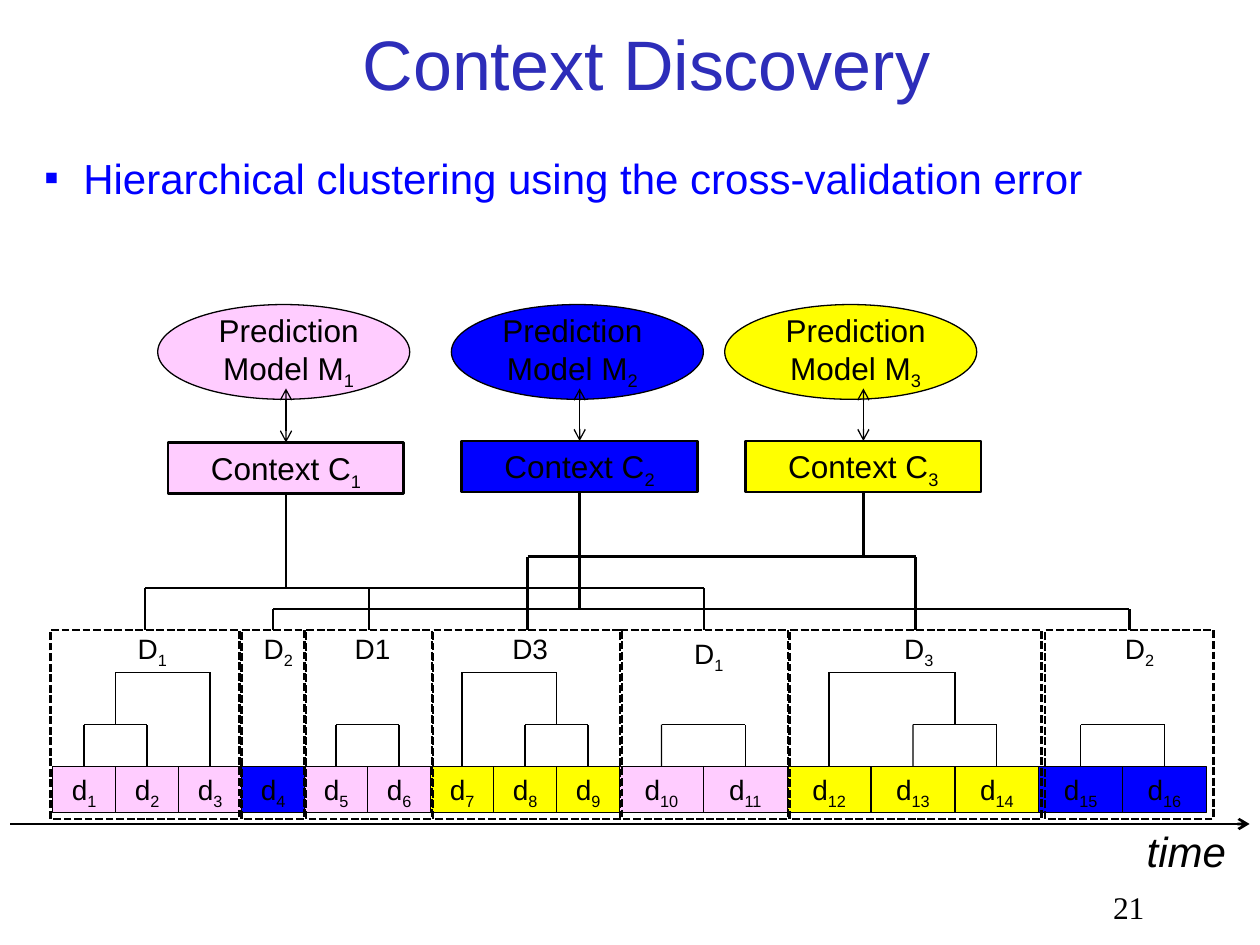
from lxml.etree import SubElement
from pptx import Presentation
from pptx.dml.color import RGBColor
from pptx.enum.dml import MSO_LINE
from pptx.enum.shapes import MSO_CONNECTOR, MSO_SHAPE
from pptx.enum.text import MSO_ANCHOR, PP_ALIGN
from pptx.oxml.ns import qn
from pptx.util import Cm, Pt

PINK, BLUE, YELLOW, BLACK = "FFCCFF", "0000FF", "FFFF00", "000000"

presentation = Presentation()
presentation.slide_width = Cm(25.4)
presentation.slide_height = Cm(19.05)
slide = presentation.slides.add_slide(presentation.slide_layouts[6])


def add_box(kind, left, top, width, height, text="", size=16, color=BLACK,
            fill=None, line=0.75, font="Arial"):
    frame = Cm(left), Cm(top), Cm(width), Cm(height)
    if kind is None:
        shape = slide.shapes.add_textbox(*frame)
    else:
        shape = slide.shapes.add_shape(kind, *frame)
        shape.shadow.inherit = False
        shape.line.color.rgb = RGBColor.from_string(BLACK)
        shape.line.width = Pt(line)
        if fill:
            shape.fill.solid()
            shape.fill.fore_color.rgb = RGBColor.from_string(fill)
        else:
            shape.fill.background()
    if not text:
        return shape
    shape.text_frame.word_wrap = True
    shape.text_frame.vertical_anchor = MSO_ANCHOR.TOP
    shape.text_frame.text = text
    for paragraph in shape.text_frame.paragraphs:
        base, mark, subscript = paragraph.text.partition("_")
        paragraph.text = base
        paragraph.alignment = PP_ALIGN.CENTER
        if subscript:
            run = paragraph.add_run()
            run.text = subscript
            run.font._element.set("baseline", "-25000")
        for run in paragraph.runs:
            run.font.name = font
            run.font.size = Pt(size)
            run.font.color.rgb = RGBColor.from_string(color)
    return shape


def add_line(x1, y1, x2, y2, width=0.75, start=None, end=None, arrows=()):
    connector = slide.shapes.add_connector(
        MSO_CONNECTOR.STRAIGHT, Cm(x1), Cm(y1), Cm(x2), Cm(y2))
    if start:
        connector.begin_connect(*start)
    if end:
        connector.end_connect(*end)
    connector.line.color.rgb = RGBColor.from_string(BLACK)
    connector.line.width = Pt(width)
    for arrow in arrows:
        SubElement(connector.line._get_or_add_ln(), qn(arrow), type="arrow")
    SubElement(connector._element.spPr, qn("a:effectLst"))


title = add_box(None, 1.7, 0, 22.66, 2.54, "Context Discovery", 40, "2D2DB9")
title.text_frame.vertical_anchor = MSO_ANCHOR.MIDDLE

bullet = add_box(None, 0.64, 2.74, 23.29, 1.45,
                 "Hierarchical clustering using the cross-validation error", 24, BLUE)
paragraph = bullet.text_frame.paragraphs[0]
paragraph.alignment = PP_ALIGN.LEFT
paragraph.line_spacing = 1.2
paragraph.space_before = Pt(4.8)
properties = paragraph._p.get_or_add_pPr()
properties.set("marL", str(Cm(0.79)))
properties.set("indent", str(-Cm(0.79)))
SubElement(SubElement(properties, qn("a:buClr")), qn("a:srgbClr"), val=BLUE)
SubElement(properties, qn("a:buFont"), typeface="Arial")
SubElement(properties, qn("a:buChar"), char="▪")

CELL_TOP = 15.45
cell_colors = [PINK] * 3 + [BLUE] + [PINK] * 2 + [YELLOW] * 3 + [PINK] * 2 + [YELLOW] * 3 + [BLUE] * 2
cells, centers = {}, {}
left = 1.06
for number, color in enumerate(cell_colors, 1):
    width = 1.27 if number < 10 else 1.69
    cells[number] = add_box(MSO_SHAPE.RECTANGLE, left, CELL_TOP, width, 0.93,
                            f"d_{number}", fill=color)
    centers[number] = left + width / 2
    left += width

add_line(0.21, 16.61, 25.19, 16.61, 1.5, arrows=["a:tailEnd"])

PAIR_TOP, MERGE_TOP = 14.61, 13.55
for first, single in [(1, 3), (5, None), (8, 7), (10, None), (13, 12), (15, None)]:
    second = first + 1
    add_line(centers[first], PAIR_TOP, centers[second], PAIR_TOP)
    for number in (first, second):
        add_line(centers[number], CELL_TOP, centers[number], PAIR_TOP, start=(cells[number], 0))
    if single:
        middle = (centers[first] + centers[second]) / 2
        add_line(middle, MERGE_TOP, middle, PAIR_TOP)
        add_line(centers[single], CELL_TOP, centers[single], MERGE_TOP, start=(cells[single], 0))
        add_line(middle, MERGE_TOP, centers[single], MERGE_TOP)

GROUP_TOP = 12.7
bar_tops = {1: 11.85, 2: 12.28, 3: 11.22}
bar_ends = {1: [], 2: [], 3: []}
groups = [
    (1.02, 3.81, 1, "D_1", 2.33, 12.6),
    (4.87, 1.27, 2, "D_2", 4.87, 12.6),
    (6.17, 2.54, 1, "D1", 6.77, 12.6),
    (8.73, 3.81, 3, "D3", 9.95, 12.6),
    (12.5, 3.39, 1, "D_1", 13.55, 12.7),
    (15.92, 5.08, 3, "D_3", 17.78, 12.6),
    (21.07, 3.39, 2, "D_2", 22.23, 12.6),
]
for left, width, context, label, label_left, label_top in groups:
    group = add_box(MSO_SHAPE.RECTANGLE, left, GROUP_TOP, width, 3.81, line=1.5)
    group.line.dash_style = MSO_LINE.SQUARE_DOT
    add_box(None, label_left, label_top, 1.48, 0.93, label)
    center = left + width / 2
    add_line(center, GROUP_TOP, center, bar_tops[context], 1.5, start=(group, 0))
    bar_ends[context].append(center)

contexts = [
    (1, PINK, 3.39, 8.92, 3.18, 4.02),
    (2, BLUE, 9.31, 8.89, 9.1, 9.74),
    (3, YELLOW, 15.03, 8.89, 14.61, 15.45),
]
for number, color, left, top, model_left, label_left in contexts:
    bar_top = bar_tops[number]
    center = left + 4.75 / 2
    add_line(min(bar_ends[number]), bar_top, max(bar_ends[number]), bar_top, 1.5)
    box = add_box(MSO_SHAPE.RECTANGLE, left, top, 4.75, 1.03, f"Context C_{number}", 18,
                  fill=color, line=1.5)
    add_line(center, bar_top, center, top + 1.03, 1.5, end=(box, 2))
    add_box(MSO_SHAPE.OVAL, model_left, 6.14, 5.08, 1.91, fill=color)
    add_box(None, label_left, 6.14, 3.6, 1.8, f"Prediction\nModel M_{number}", 18)
    add_line(center, 7.83, center, top, end=(box, 0), arrows=["a:headEnd", "a:tailEnd"])

time_label = add_box(None, 22.43, 16.72, 2.97, 1.12, "time", 24)
paragraph = time_label.text_frame.paragraphs[0]
paragraph.line_spacing = 0.8
paragraph.runs[0].font.italic = True

add_box(None, 20.11, 17.78, 5.29, 1.27, "21", 18, font="Times New Roman")

presentation.save("out.pptx")
